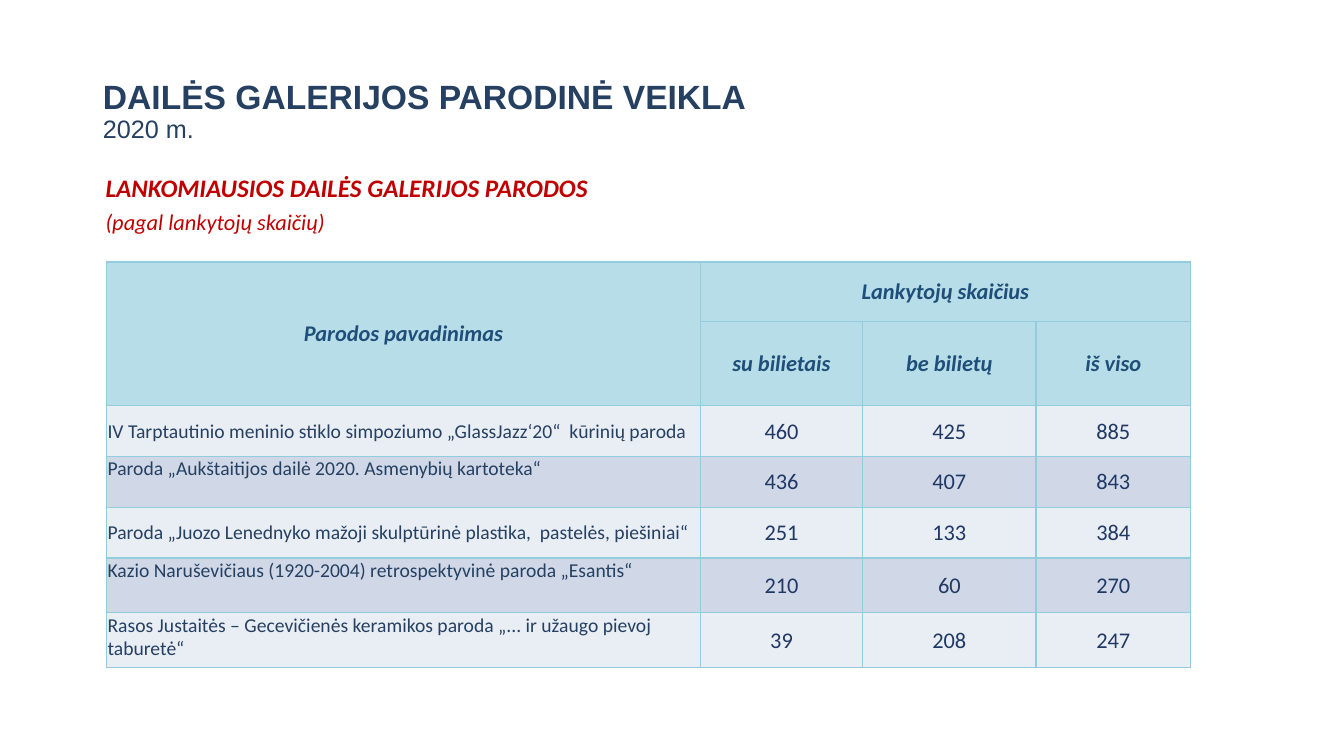
from copy import deepcopy
from dataclasses import dataclass

from lxml.etree import SubElement
from pptx import Presentation
from pptx.dml.color import RGBColor
from pptx.enum.text import MSO_ANCHOR, MSO_AUTO_SIZE, PP_ALIGN
from pptx.oxml.ns import qn
from pptx.util import Cm, Pt


@dataclass(frozen=True)
class Theme:
    head_font: str = "Arial"
    text_font: str = "Calibri"
    navy: str = "254061"
    red: str = "C00000"
    label: str = "1F4E79"
    digit: str = "203864"
    border: str = "93CDDD"
    head_fill: str = "B7DEE8"
    bands: tuple = ("E9EDF4", "D0D8E8")
    title: int = 24
    large: int = 18
    medium: int = 16
    small: int = 14


THEME = Theme()
MIDDLE, TOP = MSO_ANCHOR.MIDDLE, MSO_ANCHOR.TOP

WIDTHS = (14.96, 4.09, 4.37, 3.89)
HEIGHTS = (1.5, 2.12, 1.28, 1.28, 1.28, 1.38, 1.38)
GROUPS = ("su bilietais", "be bilietų", "iš viso")
# Exhibition name, its vertical anchor, visitor counts
SHOWS = (
    ("IV Tarptautinio meninio stiklo simpoziumo „GlassJazz‘20“  kūrinių paroda",
     MIDDLE, (460, 425, 885)),
    ("Paroda „Aukštaitijos dailė 2020. Asmenybių kartoteka“",
     TOP, (436, 407, 843)),
    ("Paroda „Juozo Lenednyko mažoji skulptūrinė plastika,  pastelės, piešiniai“",
     MIDDLE, (251, 133, 384)),
    ("Kazio Naruševičiaus (1920-2004) retrospektyvinė paroda „Esantis“",
     TOP, (210, 60, 270)),
    ("Rasos Justaitės – Gecevičienės keramikos paroda „... ir užaugo pievoj taburetė“",
     TOP, (39, 208, 247)),
)


def style(run, face, size, color, bold=False, italic=False):
    font = run.font
    font.name, font.size = face, Pt(size)
    font.bold, font.italic = bold, italic
    font.color.rgb = RGBColor.from_string(color)


def place(shape, box):
    shape.left, shape.top, shape.width, shape.height = map(Cm, box)


def add_title(slide, box):
    title = slide.shapes.title
    place(title, box)
    frame = title.text_frame
    frame.text = "DAILĖS GALERIJOS PARODINĖ VEIKLA\v2020 m."
    frame.auto_size = MSO_AUTO_SIZE.NONE
    frame.vertical_anchor = MSO_ANCHOR.BOTTOM
    para = frame.paragraphs[0]
    para.alignment, para.line_spacing = PP_ALIGN.LEFT, 0.9
    name, year = para.runs
    style(name, THEME.head_font, THEME.title, THEME.navy, bold=True)
    style(year, THEME.head_font, THEME.large, THEME.navy)
    # The line break takes the type size of the first line
    gap = para._p.find(qn("a:br"))
    gap.append(deepcopy(name._r.find(qn("a:rPr"))))


def add_lead(slide, box):
    frame = slide.shapes.add_textbox(*map(Cm, box)).text_frame
    frame.word_wrap = True
    frame.text = "LANKOMIAUSIOS DAILĖS GALERIJOS PARODOS\n(pagal lankytojų skaičių)"
    for para, size, bold in zip(
            frame.paragraphs, (THEME.large, THEME.medium), (True, False)):
        para.line_spacing, para.space_before = 0.7, Pt(10)
        style(para.runs[0], THEME.text_font, size, THEME.red, bold, italic=True)


def dress(cell, fill):
    """Set the borders, fill and margins of a cell."""
    props = cell._tc.get_or_add_tcPr()
    for side in ("a:lnL", "a:lnR", "a:lnT", "a:lnB"):
        line = SubElement(props, qn(side), w=str(Pt(1)))
        paint = SubElement(line, qn("a:solidFill"))
        SubElement(paint, qn("a:srgbClr"), val=THEME.border)
    cell.fill.solid()
    cell.fill.fore_color.rgb = RGBColor.from_string(fill)
    cell.margin_left = cell.margin_top = cell.margin_right = Cm(0.02)
    cell.margin_bottom = 0


def write(cell, text, size, color, align=PP_ALIGN.CENTER, anchor=MIDDLE, strong=False):
    cell.text_frame.text = text
    cell.vertical_anchor = anchor
    para = cell.text_frame.paragraphs[0]
    para.alignment = align
    style(para.runs[0], THEME.text_font, size, color, strong, strong)


def add_grid(slide, box):
    table = slide.shapes.add_table(len(HEIGHTS), len(WIDTHS), *map(Cm, box)).table
    table.first_row = table.horz_banding = False
    for col, width in zip(table.columns, WIDTHS):
        col.width = Cm(width)
    for row, height in zip(table.rows, HEIGHTS):
        row.height = Cm(height)
    for i, row in enumerate(table.rows):
        for cell in row.cells:
            dress(cell, THEME.head_fill if i < 2 else THEME.bands[i % 2])

    # Header rows
    table.cell(0, 0).merge(table.cell(1, 0))
    table.cell(0, 1).merge(table.cell(0, 3))
    heads = [(0, 0, "Parodos pavadinimas"), (0, 1, "Lankytojų skaičius")]
    heads += [(1, j, text) for j, text in enumerate(GROUPS, 1)]
    for i, j, text in heads:
        write(table.cell(i, j), text, THEME.medium, THEME.label, strong=True)

    # Exhibition rows
    for i, (name, anchor, counts) in enumerate(SHOWS, 2):
        write(table.cell(i, 0), name, THEME.small, THEME.navy, PP_ALIGN.LEFT, anchor)
        for j, count in enumerate(counts, 1):
            write(table.cell(i, j), str(count), THEME.medium, THEME.digit)


def main():
    deck = Presentation()
    deck.slide_width, deck.slide_height = Cm(33.87), Cm(19.05)
    slide = deck.slides.add_slide(deck.slide_layouts.get_by_name("Title Only"))
    add_title(slide, (2.34, 1.27, 29.95, 2.49))
    add_lead(slide, (2.41, 4.42, 29.74, 1.68))
    add_grid(slide, (2.69, 6.6, sum(WIDTHS), sum(HEIGHTS)))
    deck.save("out.pptx")


if __name__ == "__main__":
    main()
